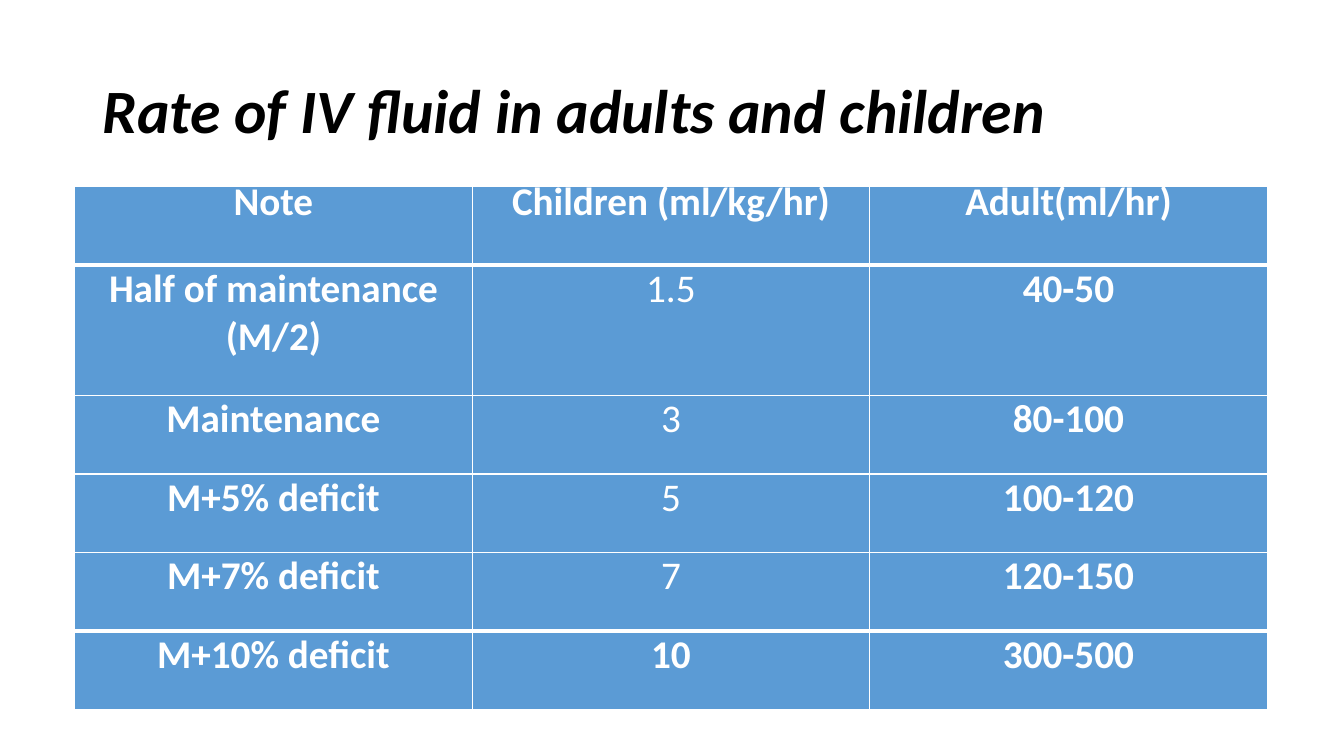
"""Build a slide with a table of intravenous fluid rates for adults and children."""
import pptx
import pptx.dml.color
import pptx.enum.text
import pptx.oxml.ns
import pptx.util
import lxml.etree

Pt = pptx.util.Pt

TITLE = "Rate of IV fluid in adults and children"
RATES = [
    ("Note", "Children (ml/kg/hr)", "Adult(ml/hr)"),
    ("Half of maintenance (M/2)", "1.5", "40-50"),
    ("Maintenance", "3", "80-100"),
    ("M+5% deficit", "5", "100-120"),
    ("M+7% deficit", "7", "120-150"),
    ("M+10% deficit", "10", "300-500"),
]
REGULAR_VALUES = {"1.5", "3", "5", "7"}
COLORS = {"title": "000000", "text": "FFFFFF", "cell": "5B9BD5", "border": "FFFFFF"}
FONT = "Calibri"
COLUMN_WIDTH = 284
ROW_HEIGHT, TALL_ROW_HEIGHT = 56.2, 93
THIN, THICK = 1, 3
LAST = len(RATES) - 1


def color(name):
    return pptx.dml.color.RGBColor.from_string(COLORS[name])


def style_font(font, size, color_name, bold):
    font.name, font.size, font.bold = FONT, Pt(size), bold
    font.color.rgb = color(color_name)


def add_borders(cell, row):
    widths = {
        "lnL": THIN,
        "lnR": THIN,
        "lnT": THICK if row in (1, LAST) else THIN,
        "lnB": THICK if row in (0, LAST - 1) else THIN,
    }
    properties = cell._tc.get_or_add_tcPr()
    qn = pptx.oxml.ns.qn
    for position, (side, width) in enumerate(widths.items()):
        line = lxml.etree.Element(qn(f"a:{side}"), w=str(int(Pt(width))))
        fill = lxml.etree.SubElement(line, qn("a:solidFill"))
        lxml.etree.SubElement(fill, qn("a:srgbClr"), val=COLORS["border"])
        properties.insert(position, line)


def fill_cell(cell, text, row):
    cell.fill.solid()
    cell.fill.fore_color.rgb = color("cell")
    cell.margin_left = cell.margin_right = cell.margin_bottom = 0
    cell.margin_top = Pt(15.1) if row == 0 else 0
    cell.text = text
    para = cell.text_frame.paragraphs[0]
    para.alignment = pptx.enum.text.PP_ALIGN.CENTER
    if row == 0:
        para.line_spacing = Pt(13.3)
    else:
        para.space_before = Pt(1.5)
    style_font(para.font, 28, "text", text not in REGULAR_VALUES)
    add_borders(cell, row)


def add_title(page):
    title = page.shapes.title
    title.left, title.top, title.width, title.height = Pt(66), Pt(28.8), Pt(828), Pt(104.4)
    frame = title.text_frame
    frame.text = TITLE
    frame.auto_size = pptx.enum.text.MSO_AUTO_SIZE.NONE
    frame.vertical_anchor = pptx.enum.text.MSO_ANCHOR.MIDDLE
    para = frame.paragraphs[0]
    para.alignment = pptx.enum.text.PP_ALIGN.LEFT
    para.line_spacing = 0.9
    style_font(para.font, 44, "title", True)
    para.font.italic = True


def add_rates(page):
    heights = [TALL_ROW_HEIGHT if row == 1 else ROW_HEIGHT for row in range(len(RATES))]
    columns = len(RATES[0])
    table = page.shapes.add_table(
        len(RATES), columns, Pt(53.3), Pt(133.2), Pt(COLUMN_WIDTH * columns), Pt(sum(heights))
    ).table
    table.horz_banding = False
    for column in table.columns:
        column.width = Pt(COLUMN_WIDTH)
    for row, values in enumerate(RATES):
        table.rows[row].height = Pt(heights[row])
        for column, text in enumerate(values):
            fill_cell(table.cell(row, column), text, row)


def main():
    deck = pptx.Presentation()
    deck.slide_width, deck.slide_height = Pt(960), Pt(540)
    page = deck.slides.add_slide(deck.slide_layouts[5])
    add_title(page)
    add_rates(page)
    deck.save("out.pptx")


if __name__ == "__main__":
    main()
